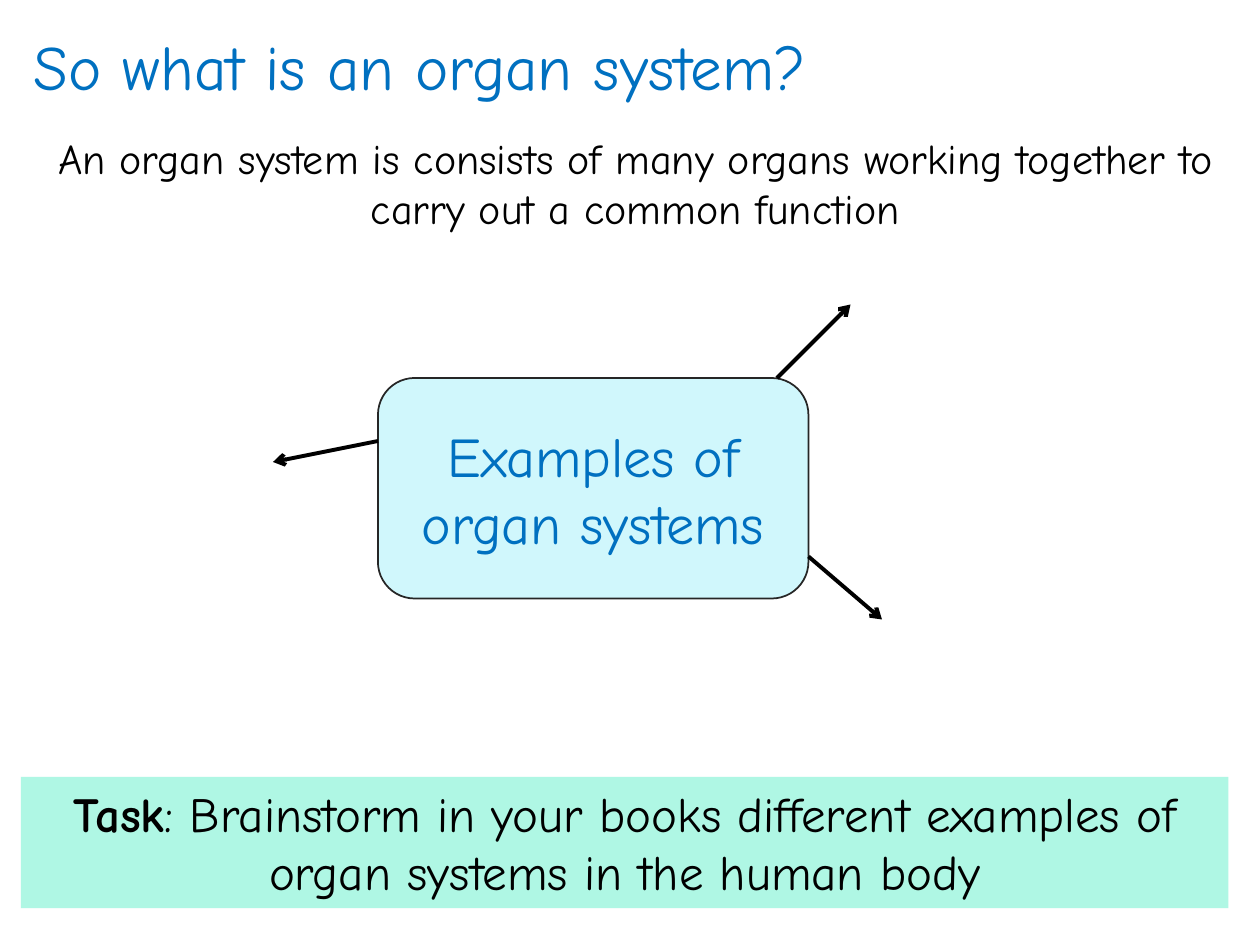
import pptx
import pptx.dml.color
import pptx.enum.shapes
import pptx.enum.text
import pptx.oxml
import pptx.oxml.ns
import pptx.util
from pptx.util import Pt

FONT = "Comic Neue"
BLUE = "0070C0"
BLACK = "000000"
LEFT = pptx.enum.text.PP_ALIGN.LEFT
CENTER = pptx.enum.text.PP_ALIGN.CENTER
TOP = pptx.enum.text.MSO_ANCHOR.TOP
MIDDLE = pptx.enum.text.MSO_ANCHOR.MIDDLE
SHAPES = pptx.enum.shapes.MSO_SHAPE

TITLE_BOX = (12, 12, 684, 51)
DEFINITION_BOX = (24, 72, 678, 65.5)
TOPIC_BOX = (216, 216, 246, 126)
TASK_BOX = (12, 444, 690, 75)
ARROWS = [
    ((444, 216), (486, 174)),
    ((216, 252), (156, 264)),
    ((462, 318), (504, 354)),
]


def color(hex_code):
    return pptx.dml.color.RGBColor.from_string(hex_code)


def write(holder, parts, size, hex_code, align=CENTER, anchor=TOP):
    """Fill one paragraph from (text, bold) parts."""
    frame = holder.text_frame
    frame.word_wrap = True
    frame.auto_size = pptx.enum.text.MSO_AUTO_SIZE.NONE
    frame.vertical_anchor = anchor
    paragraph = frame.paragraphs[0]
    paragraph.alignment = align
    for text, bold in parts:
        run = paragraph.add_run()
        run.text = text
        run.font.name = FONT
        run.font.size = Pt(size)
        run.font.bold = bold
        run.font.color.rgb = color(hex_code)


def add_title(slide, text):
    title = slide.shapes.title
    title.left, title.top, title.width, title.height = map(Pt, TITLE_BOX)
    write(title, [(text, False)], 36, BLUE, align=LEFT)


def add_definition(slide, text):
    definition = slide.shapes.add_textbox(*map(Pt, DEFINITION_BOX))
    write(definition, [(text, False)], 24, BLACK)


def add_panel(slide, preset, box, fill, outline=None):
    panel = slide.shapes.add_shape(preset, *map(Pt, box))
    panel.shadow.inherit = False
    panel.fill.solid()
    panel.fill.fore_color.rgb = color(fill)
    if outline:
        panel.line.color.rgb = color(outline)
        panel.line.width = Pt(1)
    else:
        panel.line.fill.background()
    return panel


def add_arrow(slide, start, end):
    arrow = slide.shapes.add_connector(
        pptx.enum.shapes.MSO_CONNECTOR.STRAIGHT, *map(Pt, start + end))
    arrow.line.color.rgb = color(BLACK)
    arrow.line.width = Pt(2.25)
    outline = arrow.line._get_or_add_ln()
    namespace = pptx.oxml.ns.nsdecls("a")
    outline.append(pptx.oxml.parse_xml(f'<a:tailEnd {namespace} type="arrow"/>'))
    outline.addnext(pptx.oxml.parse_xml(f"<a:effectLst {namespace}/>"))


def main():
    deck = pptx.Presentation()
    deck.slide_width, deck.slide_height = Pt(720), Pt(540)
    title_only = deck.slide_layouts[5]
    slide = deck.slides.add_slide(title_only)

    add_title(slide, "So what is an organ system?")
    topic = add_panel(slide, SHAPES.ROUNDED_RECTANGLE, TOPIC_BOX, "D0F7FC", "262626")
    write(topic, [("Examples of organ systems", False)], 32, BLUE, anchor=MIDDLE)
    add_definition(slide, "An organ system is consists of many organs working "
                          "together to carry out a common function")
    task = add_panel(slide, SHAPES.RECTANGLE, TASK_BOX, "AFF7E4")
    write(task, [("Task", True),
                 (": Brainstorm in your books different examples of "
                  "organ systems in the human body", False)], 28, BLACK)
    for start, end in ARROWS:
        add_arrow(slide, start, end)

    deck.save("out.pptx")


if __name__ == "__main__":
    main()
